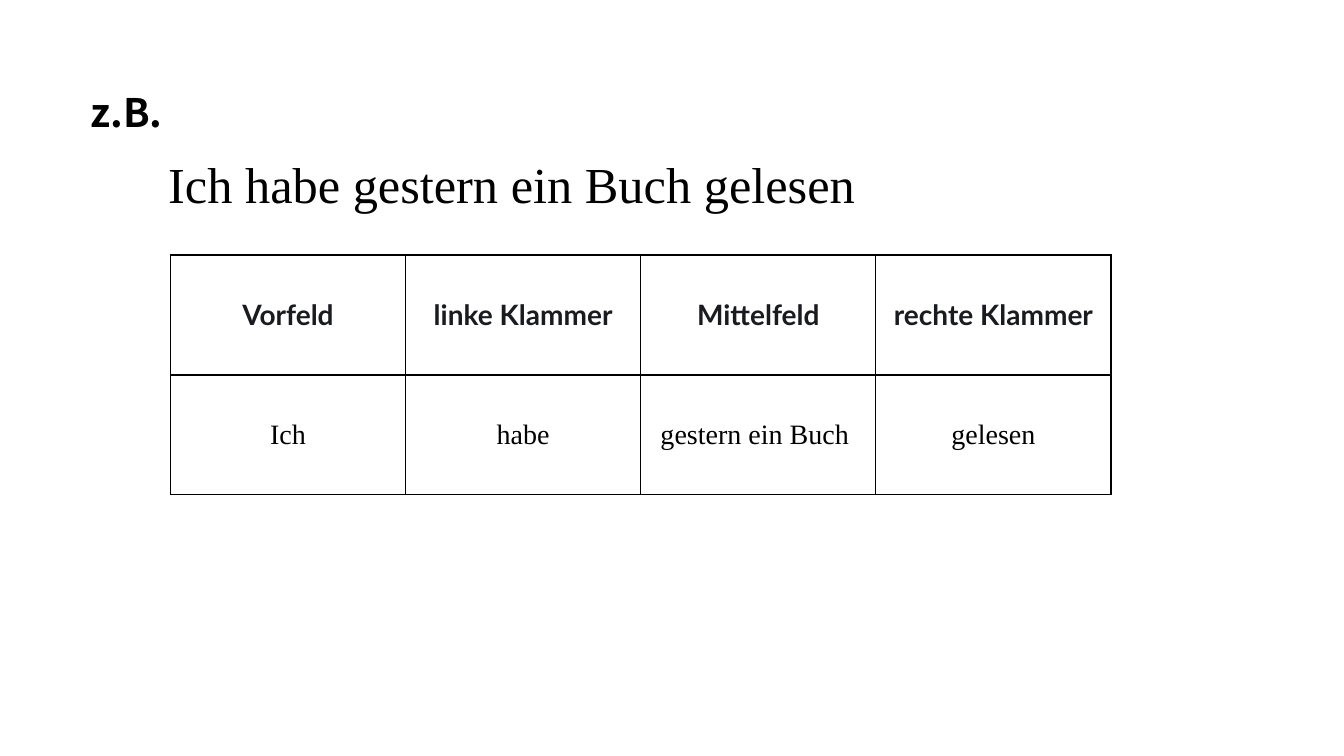
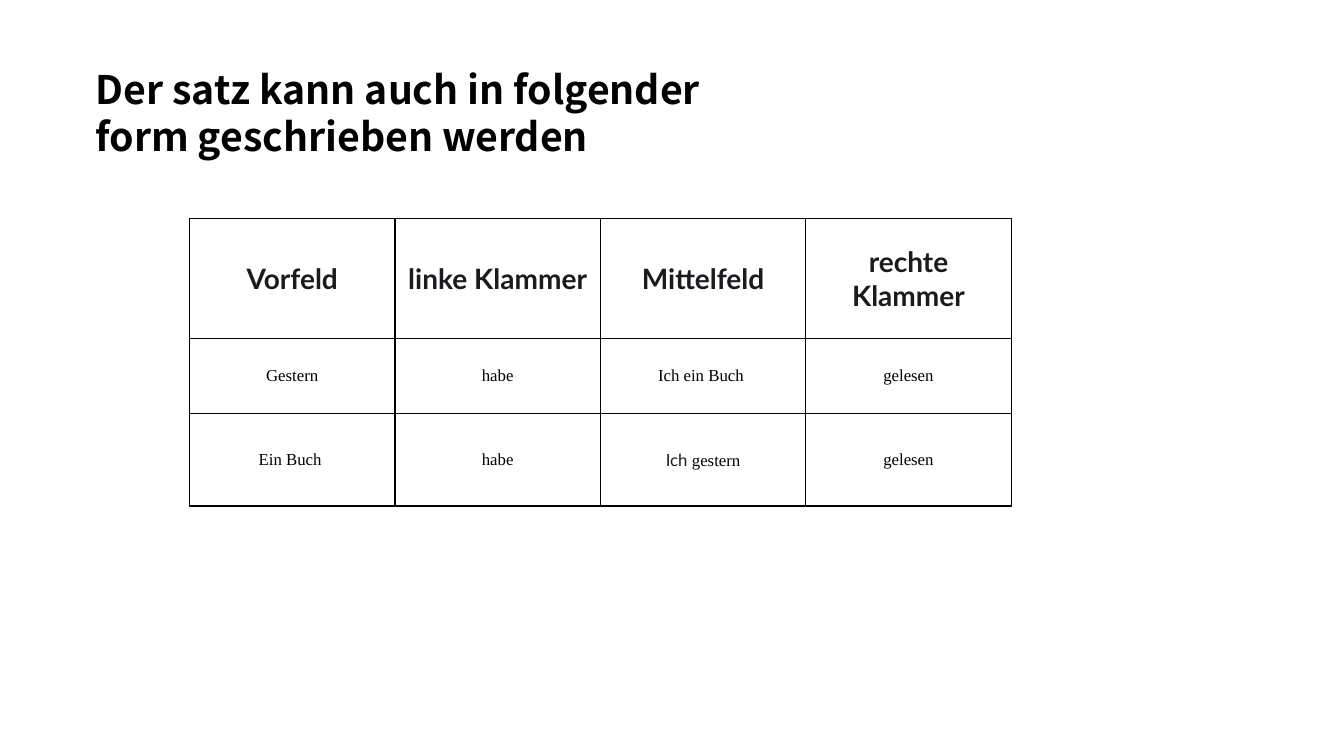
from lxml.etree import SubElement
from pptx import Presentation
from pptx.dml.color import RGBColor
from pptx.enum.text import MSO_ANCHOR, MSO_AUTO_SIZE, PP_ALIGN
from pptx.oxml import parse_xml
from pptx.oxml.ns import nsdecls, qn
from pptx.util import Inches, Pt

# Shared look
COLORS = {"text": "000000", "heading": "191B1F", "cell": "FFFFFF", "border": "000000"}
SERIF, SANS, TITLE_FONT = "Times New Roman", "Lato", "Noto Sans CJK SC"

# Style: font, size, colour, bold
TITLE = (TITLE_FONT, 28, "text", True)
SENTENCE = (SERIF, 36, "text", False)
HEADING = (SANS, 20, "heading", True)
LARGE_WORD = (SERIF, 20, "text", False)
SMALL_WORD = (SERIF, 12, "text", False)
SMALL_SANS_WORD = (SANS, 12, "heading", False)

FIELDS = ["Vorfeld", "linke Klammer", "Mittelfeld", "rechte Klammer"]
HEADING_ROW = 11.9


def grid(units):
    """Length of a number of grid units; ten units make one inch."""
    return Inches(units / 10)


def style_run(run, style):
    font_name, size, color, bold = style
    run.font.name = font_name
    run.font.size = Pt(size)
    run.font.color.rgb = RGBColor.from_string(COLORS[color])
    run.font.bold = bold


def add_line_of_text(slide, text, style, left, top, width, height, spacing=None):
    frame = slide.shapes.add_textbox(*map(grid, (left, top, width, height))).text_frame
    frame.word_wrap = True
    frame.auto_size = MSO_AUTO_SIZE.SHAPE_TO_FIT_TEXT
    frame.text = text
    paragraph = frame.paragraphs[0]
    if spacing:
        paragraph.line_spacing = Pt(spacing)
    style_run(paragraph.runs[0], style)


def add_title(slide, text, left, top, width, height):
    add_line_of_text(slide, text, TITLE, left, top, width, height, spacing=34)


def add_borders(cell):
    properties = cell._tc.get_or_add_tcPr()
    for position, side in enumerate(("lnL", "lnR", "lnT", "lnB")):
        line = parse_xml(f'<a:{side} {nsdecls("a")} w="{Pt(1)}"/>')
        fill = SubElement(line, qn("a:solidFill"))
        SubElement(fill, qn("a:srgbClr"), val=COLORS["border"])
        properties.insert(position, line)


def fill_cell(cell, content, style):
    """Content is a string, or a list of (text, style) parts."""
    parts = [(content, style)] if isinstance(content, str) else content
    cell.fill.solid()
    cell.fill.fore_color.rgb = RGBColor.from_string(COLORS["cell"])
    cell.vertical_anchor = MSO_ANCHOR.MIDDLE
    paragraph = cell.text_frame.paragraphs[0]
    paragraph.alignment = PP_ALIGN.CENTER
    paragraph.text = parts[0][0]
    for text, _ in parts[1:]:
        paragraph.add_run().text = text
    for run, (_, part_style) in zip(paragraph.runs, parts):
        style_run(run, part_style)
    add_borders(cell)


def add_field_table(slide, left, top, width, rows):
    """Rows are (height, style, contents); columns share the width equally."""
    height = sum(row[0] for row in rows)
    table = slide.shapes.add_table(
        len(rows), len(FIELDS), *map(grid, (left, top, width, height))).table
    table.first_row = table.horz_banding = False
    for column in table.columns:
        column.width = grid(width / len(FIELDS))
    for row, (row_height, style, contents) in zip(table.rows, rows):
        row.height = grid(row_height)
        for cell, content in zip(row.cells, contents):
            fill_cell(cell, content, style)


def build_example(slide):
    add_line_of_text(slide, "Ich habe gestern ein Buch gelesen", SENTENCE,
                     15.7, 14.7, 74.6, 7.1)
    add_title(slide, "z.B.", 8, 8.2, 34.4, 5.7)
    add_field_table(slide, 16.9, 25.3, 93.3, [
        (HEADING_ROW, HEADING, FIELDS),
        (HEADING_ROW, LARGE_WORD, ["Ich", "habe", "gestern ein Buch ", "gelesen"]),
    ])


def build_variants(slide):
    left, top, width = 18.8, 21.7, 81.5
    ich_gestern = [("Ich ", SMALL_SANS_WORD), ("gestern", SMALL_WORD)]
    # Sentences stand directly below the separate heading table
    add_field_table(slide, left, top + HEADING_ROW, width, [
        (7.4, SMALL_WORD, ["Gestern", "habe", "Ich ein Buch ", "gelesen"]),
        (9.2, SMALL_WORD, ["Ein Buch ", "habe", ich_gestern, "gelesen"]),
    ])
    add_title(slide, "Der satz kann auch in folgender form geschrieben werden",
              8.5, 5.9, 71.5, 10.4)
    add_field_table(slide, left, top, width, [(HEADING_ROW, HEADING, FIELDS)])


def main():
    presentation = Presentation()
    presentation.slide_width = Inches(13.33)
    presentation.slide_height = Inches(7.5)
    blank = presentation.slide_layouts[6]
    for build in (build_example, build_variants):
        build(presentation.slides.add_slide(blank))
    presentation.save("out.pptx")


if __name__ == "__main__":
    main()
